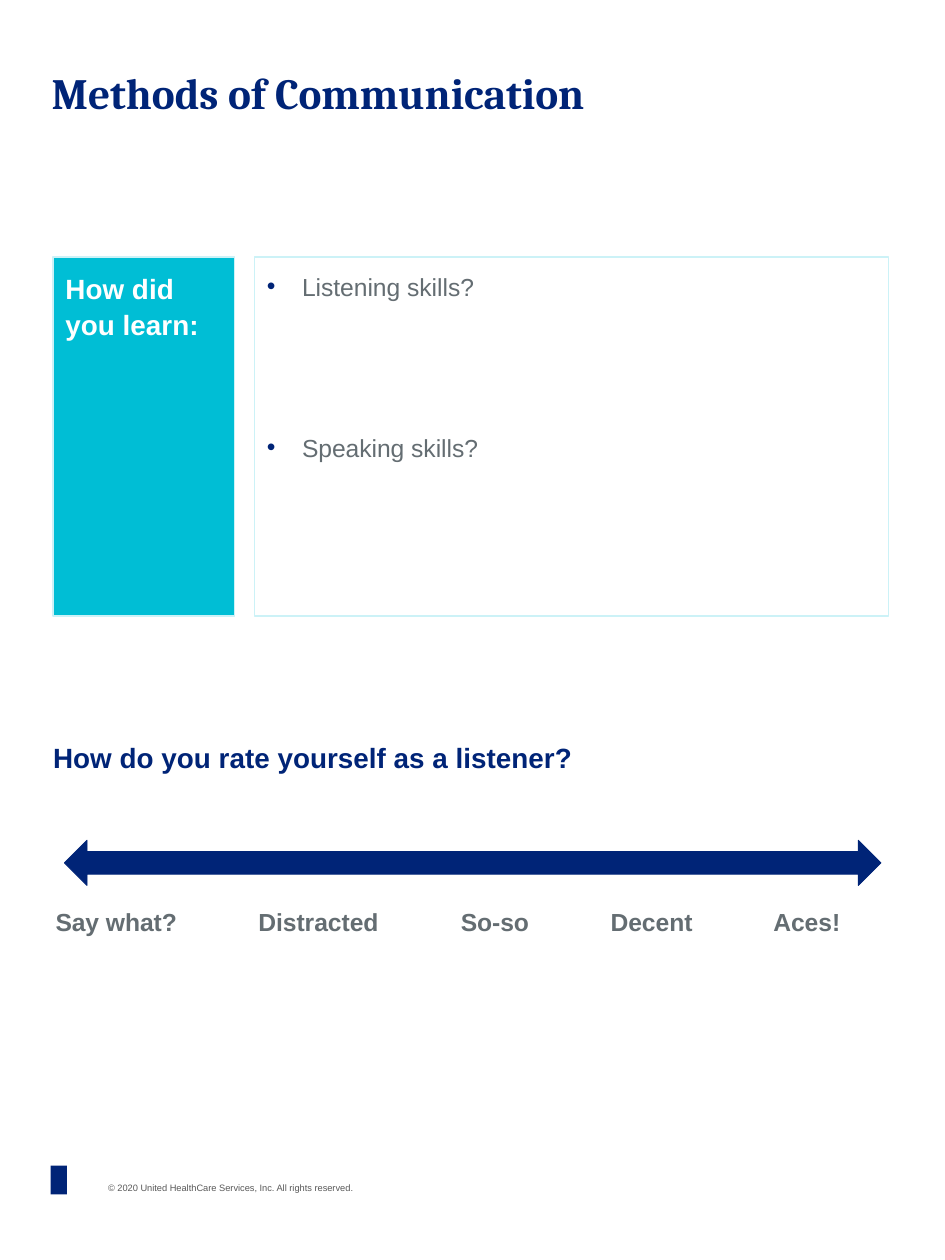
from lxml.etree import SubElement
from pptx import Presentation
from pptx.dml.color import RGBColor
from pptx.enum.shapes import MSO_SHAPE as Preset
from pptx.enum.text import MSO_ANCHOR as Anchor
from pptx.oxml.ns import qn
from pptx.util import Cm, Pt

# Content
TITLE = "Methods of Communication"
PROMPT = ["How did", "you learn:"]
SKILLS = ["Listening skills?", "Speaking skills?"]
QUESTION = "How do you rate yourself as a listener?"
# Each rating with its distance from the left of the scale, in cm
RATINGS = [("Say what?", 0), ("Distracted", 4.09), ("So-so", 8.17),
           ("Decent", 11.19), ("Aces!", 14.47)]
COPYRIGHT = "© 2020 United HealthCare Services, Inc. All rights reserved."

NAVY, TEAL, PALE = "002477", "00BED5", "CCF2F7"
GREY, FOOT_GREY, WHITE = "646D72", "595959", "FFFFFF"
LEFT, PANEL_TOP, PANEL_HEIGHT = 1.07, 5.18, 7.24
INSET = 0.25


def color(value):
    return RGBColor.from_string(value)


def set_frame(box, inset=0, anchor=Anchor.TOP):
    frame = box.text_frame
    frame.word_wrap = True
    frame.vertical_anchor = anchor
    frame.margin_left = frame.margin_right = Cm(inset)
    frame.margin_top = frame.margin_bottom = Cm(inset / 2 if box.is_placeholder else inset)
    return frame


def add_text(page, left, top, width, height, inset=0, anchor=Anchor.TOP):
    box = page.shapes.add_textbox(Cm(left), Cm(top), Cm(width), Cm(height))
    return set_frame(box, inset, anchor)


def add_shape(page, preset, left, top, width, height, fill=None, line=None, weight=0.75):
    shape = page.shapes.add_shape(preset, Cm(left), Cm(top), Cm(width), Cm(height))
    shape.shadow.inherit = False
    if fill:
        shape.fill.solid()
        shape.fill.fore_color.rgb = color(fill)
    else:
        shape.fill.background()
    if line:
        shape.line.color.rgb = color(line)
        shape.line.width = Pt(weight)
    else:
        shape.line.fill.background()
    return shape


def write(para, lines, size, ink, bold=False, font="Arial", spacing=1.07):
    para.alignment = 1
    para.line_spacing = spacing
    for number, line in enumerate(lines):
        if number:
            para.add_line_break()
        span = para.add_run()
        span.text = line
        span.font.name, span.font.size, span.font.bold = font, Pt(size), bold
        span.font.color.rgb = color(ink)


def add_bullet(para, ink, indent, hanging):
    props = para._p.get_or_add_pPr()
    props.set("marL", str(Cm(indent)))
    props.set("indent", str(-Cm(hanging)))
    tint = SubElement(props, qn("a:buClr"))
    SubElement(tint, qn("a:srgbClr"), val=ink)
    SubElement(props, qn("a:buFont"), typeface="Arial")
    SubElement(props, qn("a:buChar"), char="•")


def add_tabs(para, stops):
    tabs = SubElement(para._p.get_or_add_pPr(), qn("a:tabLst"))
    for stop in stops:
        SubElement(tabs, qn("a:tab"), pos=str(Cm(stop)), algn="l")


deck = Presentation()
deck.slide_width, deck.slide_height = Cm(19.05), Cm(25.4)
page = deck.slides.add_slide(deck.slide_layouts[6])

# Footer: plain mark and copyright line
add_shape(page, Preset.RECTANGLE, 1.02, 23.5, 0.33, 0.58, fill=NAVY)
footer = add_text(page, 1.93, 23.7, 7.24, 0.48, INSET, Anchor.MIDDLE)
footer.margin_top = footer.margin_bottom = 0
write(footer.paragraphs[0], [COPYRIGHT], 5.3, FOOT_GREY, spacing=1)

# Title
title = add_text(page, 0.79, 1.14, 17.25, 2.26, INSET)
title.margin_top = Cm(0.13)
write(title.paragraphs[0], [TITLE], 24.7, NAVY, bold=True, font="Cambria")

# Prompt panel
prompt = add_shape(page, Preset.RECTANGLE, LEFT, PANEL_TOP, 3.66, PANEL_HEIGHT, TEAL, PALE)
write(set_frame(prompt, INSET).paragraphs[0], PROMPT, 15.9, WHITE, bold=True)

# Skills panel, with writing room below each bullet
skills = add_shape(page, Preset.RECTANGLE, 5.13, PANEL_TOP, 12.78, PANEL_HEIGHT, line=PALE)
frame = set_frame(skills, INSET)
for number, skill in enumerate(SKILLS):
    para = frame.add_paragraph() if number else frame.paragraphs[0]
    add_bullet(para, NAVY, 0.71, 0.71)
    para.space_after = Pt(74)
    write(para, [skill], 14.1, GREY)

# Listener rating scale
question = add_text(page, LEFT, 14.88, 16.89, 1.6)
write(question.paragraphs[0], [QUESTION], 15.9, NAVY, bold=True)
add_shape(page, Preset.LEFT_RIGHT_ARROW, 1.3, 16.94, 16.46, 0.91, NAVY, NAVY, 0.5)
scale = add_text(page, 1.12, 18.24, 16.79, 1.6).paragraphs[0]
add_tabs(scale, [stop for _, stop in RATINGS[1:]])
write(scale, ["\t".join(label for label, _ in RATINGS)], 14.1, GREY, bold=True)

deck.save("out.pptx")
